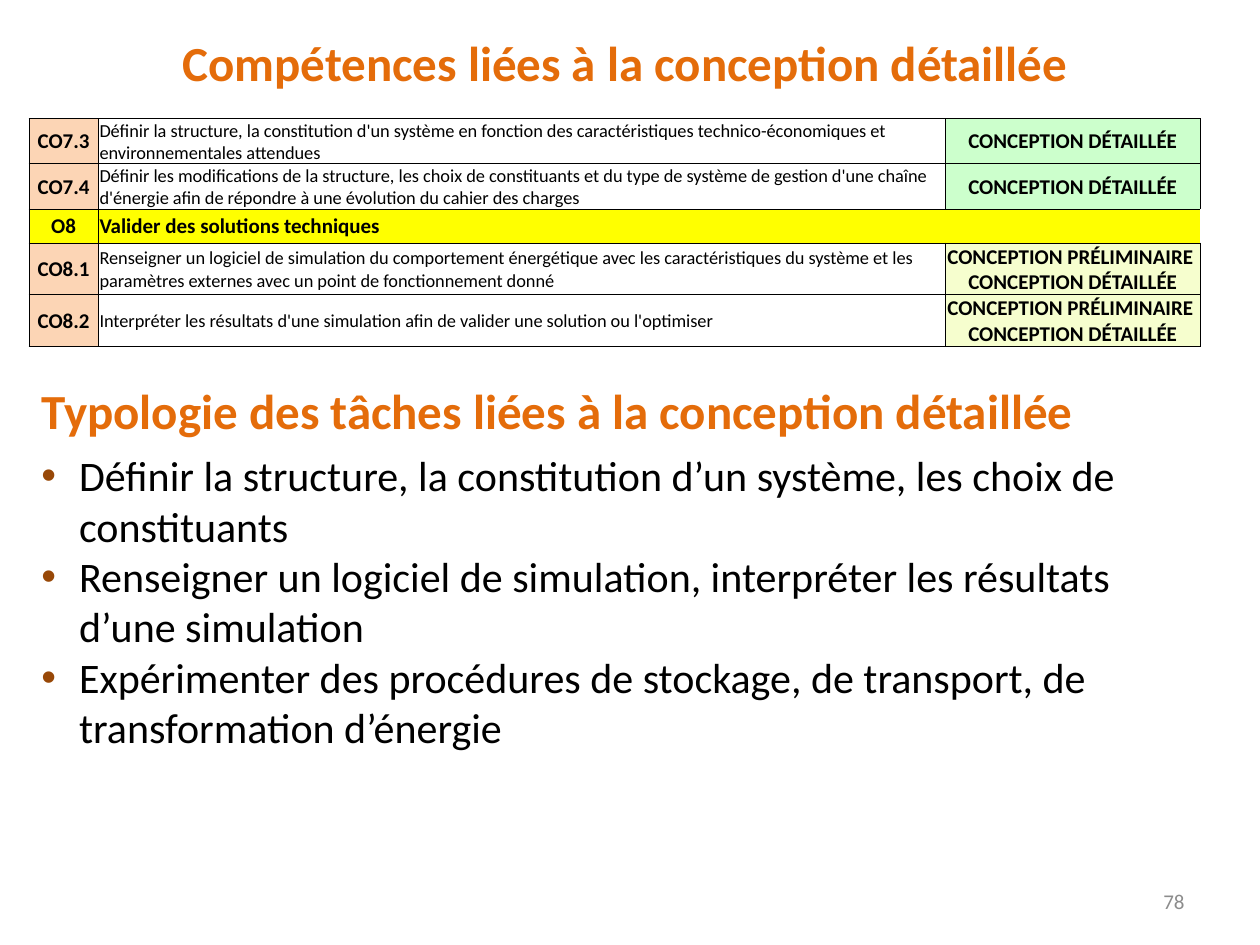
from dataclasses import dataclass
from typing import Optional

from lxml import etree
from pptx import Presentation
from pptx.dml.color import RGBColor
from pptx.enum.shapes import MSO_SHAPE
from pptx.enum.text import MSO_ANCHOR, MSO_AUTO_SIZE, PP_ALIGN
from pptx.oxml.ns import qn
from pptx.util import Emu, Inches, Pt

LEFT, CENTER, RIGHT = PP_ALIGN.LEFT, PP_ALIGN.CENTER, PP_ALIGN.RIGHT
MIDDLE, TOP = MSO_ANCHOR.MIDDLE, MSO_ANCHOR.TOP
FIT_SHAPE = MSO_AUTO_SIZE.SHAPE_TO_FIT_TEXT
RECTANGLE = MSO_SHAPE.RECTANGLE

FONT = "Calibri"
BLACK, WHITE, GREY = "000000", "FFFFFF", "8C8C8C"
ORANGE, BROWN = "E46C0A", "984807"
PEACH, GREEN, CREAM, YELLOW = "FCD5B5", "CCFFCC", "F6FECE", "FFFF00"

# Slide grid: 1000 columns by 750 rows
COLUMNS, ROWS = 1000, 750
SLIDE_W, SLIDE_H = Inches(10), Inches(7.5)


def col(n: float) -> Emu:
    return Emu(round(SLIDE_W * n / COLUMNS))


def row(n: float) -> Emu:
    return Emu(round(SLIDE_H * n / ROWS))


def rgb(value: str) -> RGBColor:
    return RGBColor.from_string(value)


@dataclass
class Style:
    size: float
    color: str = BLACK
    bold: bool = False


@dataclass
class Box:
    left: float
    top: float
    width: float
    height: float

    def place(self) -> tuple:
        return col(self.left), row(self.top), col(self.width), row(self.height)


@dataclass
class Skill:
    code: str
    wording: str
    phases: tuple = ()
    phase_fill: Optional[str] = None
    height: float = 30

    @property
    def is_heading(self) -> bool:
        return not self.phases


HEADING = Style(28, ORANGE, True)
TASK = Style(24)
LABEL = Style(12, bold=True)
DETAIL = Style(10.5)
PAGE = Style(12, GREY)

PRELIMINARY, DETAILED = "CONCEPTION PRÉLIMINAIRE ", "CONCEPTION DÉTAILLÉE"
SKILLS = [
    Skill("CO7.3", "Définir la structure, la constitution d'un système en fonction des "
          "caractéristiques technico-économiques et environnementales attendues",
          (DETAILED,), GREEN),
    Skill("CO7.4", "Définir les modifications de la structure, les choix de constituants et "
          "du type de système de gestion d'une chaîne d'énergie afin de répondre à une "
          "évolution du cahier des charges", (DETAILED,), GREEN),
    Skill("O8", "Valider des solutions techniques", height=27),
    Skill("CO8.1", "Renseigner un logiciel de simulation du comportement énergétique avec "
          "les caractéristiques du système et les paramètres externes avec un point de "
          "fonctionnement donné", (PRELIMINARY, DETAILED), CREAM),
    Skill("CO8.2", "Interpréter les résultats d'une simulation afin de valider une solution "
          "ou l'optimiser", (PRELIMINARY, DETAILED), CREAM),
]
TASKS = [
    "Définir la structure, la constitution d’un système, les choix de constituants",
    "Renseigner un logiciel de simulation, interpréter les résultats d’une simulation",
    "Expérimenter des procédures de stockage, de transport, de transformation d’énergie",
]


def write(paragraph, lines: tuple, style: Style, align=LEFT) -> None:
    paragraph.alignment = align
    for index, line in enumerate(lines):
        if index:
            paragraph.add_line_break()
        run = paragraph.add_run()
        run.text = line
        run.font.name, run.font.size, run.font.bold = FONT, Pt(style.size), style.bold
        run.font.color.rgb = rgb(style.color)


def hang(paragraph, bullet: Optional[str] = None) -> None:
    """Hanging indent, with a coloured bullet if one is given."""
    props = paragraph._p.get_or_add_pPr()
    props.set("marL", str(col(30)))
    props.set("indent", str(-col(30)))
    if bullet:
        color = etree.SubElement(props, qn("a:buClr"))
        etree.SubElement(color, qn("a:srgbClr"), val=bullet)
        etree.SubElement(props, qn("a:buFont"), typeface="Arial")
        etree.SubElement(props, qn("a:buChar"), char="•")
    else:
        etree.SubElement(props, qn("a:buNone"))


def add_panel(slide, box: Box, heading: str, align=LEFT, tasks: tuple = ()) -> None:
    panel = slide.shapes.add_shape(RECTANGLE, *box.place())
    panel.shadow.inherit = False
    panel.fill.solid()
    panel.fill.fore_color.rgb = rgb(WHITE)
    panel.line.fill.background()
    frame = panel.text_frame
    frame.word_wrap, frame.auto_size, frame.vertical_anchor = True, FIT_SHAPE, TOP
    first = frame.paragraphs[0]
    write(first, (heading,), HEADING, align)
    first.space_after = Pt(6)
    hang(first)
    for task in tasks:
        item = frame.add_paragraph()
        write(item, (task,), TASK)
        hang(item, BROWN)


def set_borders(cell, sides: str) -> None:
    props = cell._tc.get_or_add_tcPr()
    for index, side in enumerate(sides):
        line = etree.Element(qn(f"a:ln{side}"), w=str(Pt(0.5)))
        fill = etree.SubElement(line, qn("a:solidFill"))
        etree.SubElement(fill, qn("a:srgbClr"), val=BLACK)
        props.insert(index, line)


def fill_cell(cell, lines: tuple, style: Style, align=LEFT,
              fill: Optional[str] = None, sides: str = "LRTB") -> None:
    cell.margin_left = cell.margin_right = cell.margin_top = col(1)
    cell.margin_bottom = 0
    cell.vertical_anchor = MIDDLE
    if fill:
        cell.fill.solid()
        cell.fill.fore_color.rgb = rgb(fill)
    else:
        cell.fill.background()
    set_borders(cell, sides)
    write(cell.text_frame.paragraphs[0], lines, style, align)


def add_skill_table(slide, box: Box, widths: tuple) -> None:
    holder = slide.shapes.add_table(len(SKILLS), len(widths), *box.place())
    table = holder.table
    table.first_row = table.horz_banding = False
    for column, width in zip(table.columns, widths):
        column.width = col(width)
    for index, skill in enumerate(SKILLS):
        table.rows[index].height = row(skill.height)
        code, wording, phase = (table.cell(index, c) for c in range(len(widths)))
        code_fill = YELLOW if skill.is_heading else PEACH
        fill_cell(code, (skill.code,), LABEL, CENTER, code_fill)
        if skill.is_heading:
            wording.merge(phase)
            fill_cell(wording, (skill.wording,), LABEL, fill=YELLOW, sides="LTB")
        else:
            fill_cell(wording, (skill.wording,), DETAIL)
            fill_cell(phase, skill.phases, LABEL, CENTER, skill.phase_fill)
    holder.height = row(box.height)


def add_page_number(slide, box: Box, number: str) -> None:
    frame = slide.shapes.add_textbox(*box.place()).text_frame
    frame.word_wrap, frame.vertical_anchor = True, MIDDLE
    write(frame.paragraphs[0], (number,), PAGE, RIGHT)


def main() -> None:
    deck = Presentation()
    deck.slide_width, deck.slide_height = SLIDE_W, SLIDE_H
    slide = deck.slides.add_slide(deck.slide_layouts[6])
    add_page_number(slide, Box(717, 695, 233, 40), "78")
    # Skills, then the kinds of tasks, then the slide title
    add_skill_table(slide, Box(23, 94, 930, 180), (55, 672, 203))
    add_panel(slide, Box(23, 297, 930, 308),
              "Typologie des tâches liées à la conception détaillée", tasks=tuple(TASKS))
    add_panel(slide, Box(31, 21, 930, 57),
              "Compétences liées à la conception détaillée", CENTER)
    deck.save("out.pptx")


if __name__ == "__main__":
    main()
